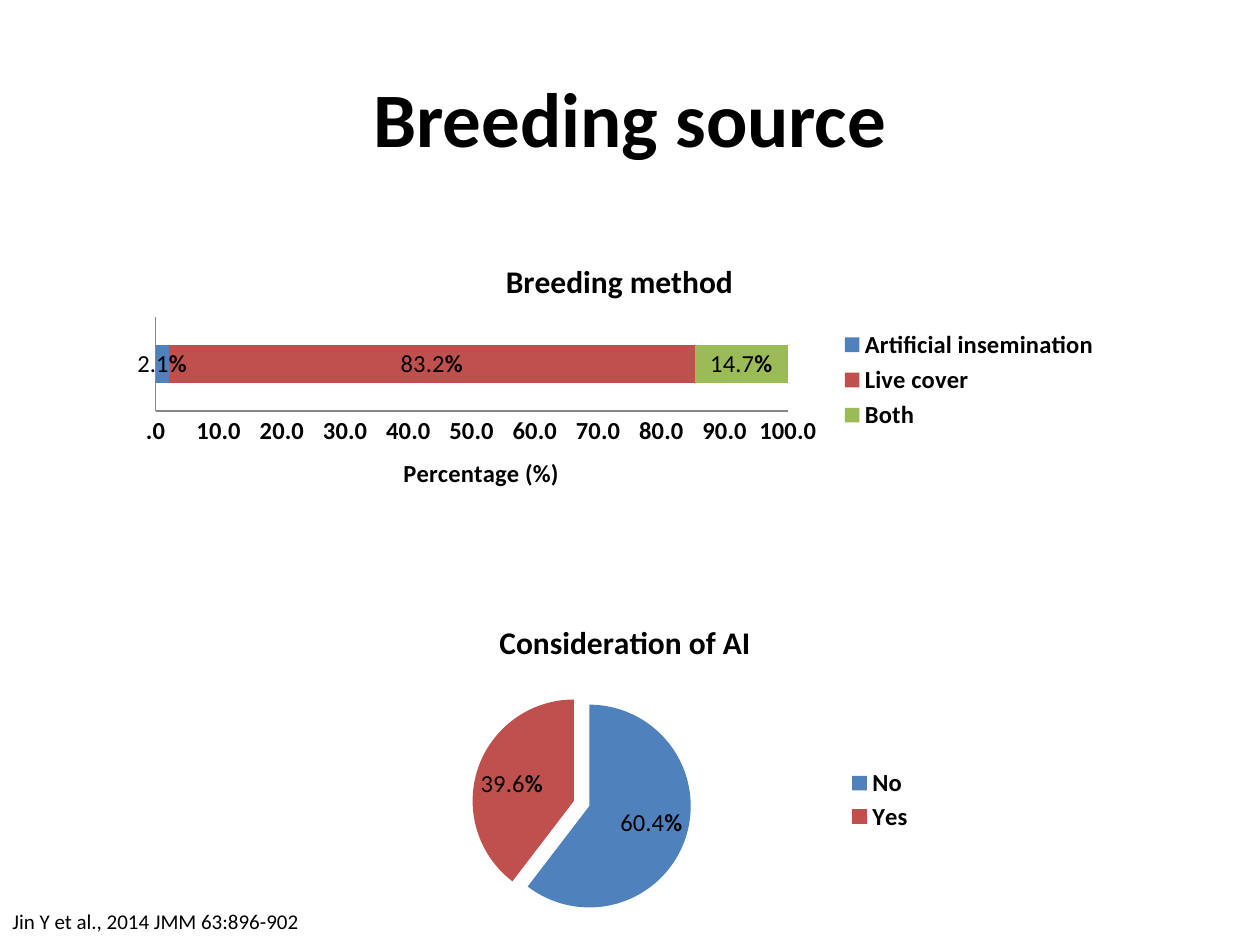
from lxml.etree import SubElement
from pptx import Presentation
from pptx.chart.data import CategoryChartData
from pptx.dml.color import RGBColor
from pptx.enum.chart import (XL_CHART_TYPE, XL_LABEL_POSITION, XL_LEGEND_POSITION,
                             XL_TICK_LABEL_POSITION, XL_TICK_MARK)
from pptx.enum.text import MSO_ANCHOR, PP_ALIGN
from pptx.oxml import parse_xml
from pptx.oxml.ns import nsdecls, qn
from pptx.util import Pt

SCALE = 914400 / 126  # EMU in one px
THEME = {
    "font": "Calibri", "ink": RGBColor(0, 0, 0), "axis": RGBColor(0x86, 0x86, 0x86),
    "fills": [RGBColor.from_string(code) for code in ("4F81BD", "C0504D", "9BBB59")],
    "title": Pt(44), "chart_title": Pt(18), "label": Pt(14), "base": Pt(10), "credit": Pt(12),
}


def style(font, size, bold=False):
    values = {"name": THEME["font"], "size": THEME[size], "bold": bold}
    for name, value in values.items():
        setattr(font, name, value)
    font.color.rgb = THEME["ink"]


def place(element, frame, area, target=None):
    """Fix a chart part at area, given in slide px, inside the chart's frame."""
    layout = element.find(qn("c:layout"))
    if layout is None:
        layout = parse_xml(f"<c:layout {nsdecls('c')}/>")
        if target:
            element.insert(0, layout)
        else:
            element.find(qn("c:legendPos")).addnext(layout)
    for child in list(layout):
        layout.remove(child)
    manual = SubElement(layout, qn("c:manualLayout"))
    left, top, width, height = frame
    settings = {"xMode": "edge", "yMode": "edge",
                "x": round((area[0] - left) / width, 3), "y": round((area[1] - top) / height, 3),
                "w": round(area[2] / width, 3), "h": round(area[3] / height, 3)}
    if target:
        settings = {"layoutTarget": target, **settings}
    for name, value in settings.items():
        SubElement(manual, qn(f"c:{name}")).set("val", str(value))


deck = Presentation()
deck.slide_width, deck.slide_height = int(1260 * SCALE), int(945 * SCALE)
page = deck.slides.add_slide(deck.slide_layouts[6])

# Both charts: data, frame, plot area and legend area in px
CHARTS = [
    {"type": XL_CHART_TYPE.BAR_STACKED, "title": "Breeding method", "cats": ["1"],
     "series": {"Artificial insemination": [2.1], "Live cover": [83.2], "Both": [14.7]},
     "frame": (127, 242, 985, 276), "plot": (156, 317, 632, 94), "legend": None,
     "position": XL_LABEL_POSITION.CENTER},
    {"type": XL_CHART_TYPE.PIE, "title": "Consideration of AI", "cats": ["No", "Yes"],
     "series": {"Series 1": [60.4, 39.6]},
     "frame": (252, 601, 746, 336), "plot": (472, 694, 219, 219), "legend": (845, 765, 70, 70),
     "position": XL_LABEL_POSITION.BEST_FIT},
]
charts = []
for item in CHARTS:
    data = CategoryChartData(number_format="####.0")
    data.categories = item["cats"]
    for name, values in item["series"].items():
        data.add_series(name, values)
    frame = [int(length * SCALE) for length in item["frame"]]
    chart = page.shapes.add_chart(item["type"], *frame, data).chart
    charts.append(chart)
    style(chart.font, "base")
    chart.has_title = True
    chart.chart_title.include_in_layout = False
    title = chart.chart_title.text_frame.paragraphs[0].add_run()
    title.text = item["title"]
    style(title.font, "chart_title", True)
    chart.has_legend = True
    chart.legend.position = XL_LEGEND_POSITION.RIGHT
    chart.legend.include_in_layout = False
    style(chart.legend.font, "label", True)
    if item["legend"]:
        place(chart.legend._element, item["frame"], item["legend"])
    place(chart._chartSpace.chart.plotArea, item["frame"], item["plot"], "inner")

    plot = chart.plots[0]
    plot.vary_by_categories = item["type"] == XL_CHART_TYPE.PIE
    for order, series in enumerate(plot.series):
        if not plot.vary_by_categories:
            series.format.fill.solid()
            series.format.fill.fore_color.rgb = THEME["fills"][order]
        for index, value in enumerate(series.values):
            point = series.points[index]
            if plot.vary_by_categories:
                point.format.fill.solid()
                point.format.fill.fore_color.rgb = THEME["fills"][index]
            para = point.data_label.text_frame.paragraphs[0]
            for text, bold in ((f"{value:.1f}", False), ("%", True)):
                span = para.add_run()
                span.text = text
                style(span.font, "label", bold)
            point.data_label.position = item["position"]
        labels = series.data_labels
        labels.show_value = True
        labels.number_format, labels.number_format_is_linked = "####.0", False
        labels.position = item["position"]
        style(labels.font, "label", True)

bar, pie = charts
bar.plots[0].gap_width, bar.plots[0].overlap = 150, 100
for axis in (bar.category_axis, bar.value_axis):
    axis.has_major_gridlines = False
    axis.major_tick_mark = axis.minor_tick_mark = XL_TICK_MARK.NONE
    axis.format.line.color.rgb = THEME["axis"]
bar.category_axis.tick_label_position = XL_TICK_LABEL_POSITION.NONE
scale = bar.value_axis
scale.minimum_scale, scale.maximum_scale, scale.major_unit = 0, 100, 10
scale.tick_labels.number_format = "####.0"
scale.tick_labels.number_format_is_linked = False
style(scale.tick_labels.font, "label", True)
span = scale.axis_title.text_frame.paragraphs[0].add_run()
span.text = "Percentage (%)"
style(span.font, "label", True)

first_point = pie.plots[0].series[0]._element.find(qn("c:dPt"))
first_point.addprevious(parse_xml(f'<c:explosion {nsdecls("c")} val="8"/>'))

TEXTS = [
    ("Breeding source", (63, 38, 1134, 157), "title", True, PP_ALIGN.CENTER, MSO_ANCHOR.MIDDLE),
    ("Jin Y et al., 2014 JMM 63:896-902", (0, 902, 316, 38), "credit", False,
     PP_ALIGN.LEFT, MSO_ANCHOR.TOP),
]
for text, area, size, bold, align, anchor in TEXTS:
    box = page.shapes.add_textbox(*[int(length * SCALE) for length in area])
    box.text_frame.word_wrap = size == "title"
    box.text_frame.vertical_anchor = anchor
    para = box.text_frame.paragraphs[0]
    para.alignment = align
    span = para.add_run()
    span.text = text
    style(span.font, size, bold)

deck.save("out.pptx")
